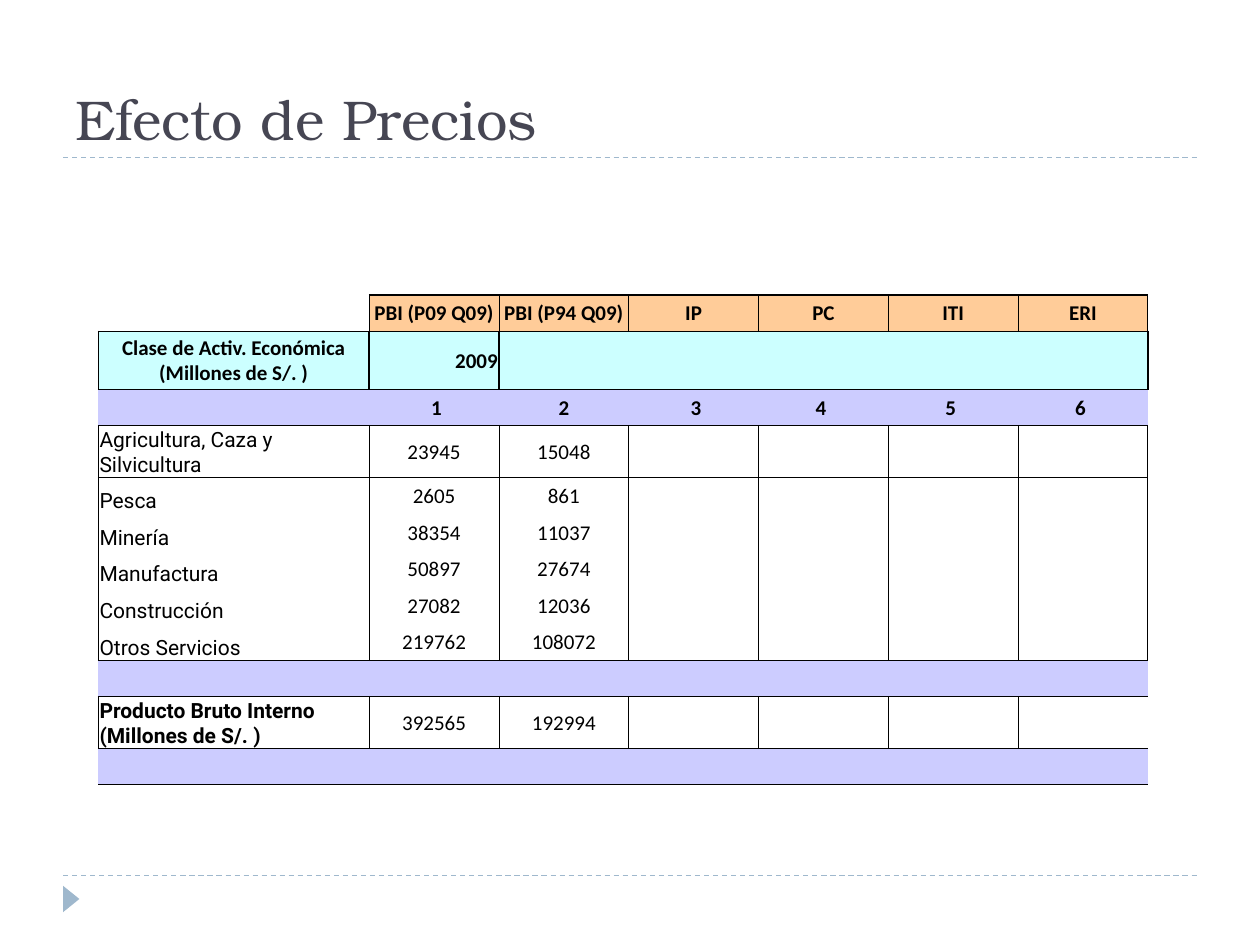
from lxml import etree
from pptx import Presentation
from pptx import util as u
from pptx.dml.color import RGBColor
from pptx.enum import dml, shapes, text
from pptx.oxml import ns

COLORS = {
    "title": "464653", "accent": "9FB8CD", "ink": "000000",
    "header": "FFCC99", "year": "CCFFFF", "band": "CCCCFF",
}
NO_STYLE = "{2D5ABB26-0587-4C30-8999-92F81FD0307C}"
COLUMN_WIDTHS = [2.15] + [1.03] * 6
ROW_HEIGHT = 0.29
TALL_ROWS = {"year": 0.46, "total": 0.41}

# Each row: kind, then the texts from the left
ROWS = [
    ("header", ["", "PBI (P09 Q09)", "PBI (P94 Q09)", "IP", "PC", "ITI", "ERI"]),
    ("year", ["Clase de Activ. Económica (Millones de S/. )", "2009"]),
    ("band", ["", " 1", "2", " 3", "4 ", "5 ", "6 "]),
    ("first", ["Agricultura, Caza y Silvicultura", "23945", "15048"]),
    ("body", ["Pesca", "2605", "861"]),
    ("body", ["Minería", "38354", "11037"]),
    ("body", ["Manufactura", "50897", "27674"]),
    ("body", ["Construcción", "27082", "12036"]),
    ("last", ["Otros Servicios", "219762", "108072"]),
    ("band", []),
    ("total", ["Producto Bruto Interno (Millones de S/. )", "392565", "192994"]),
    ("band", []),
]

# Border widths in points by side, for each kind of row
BORDERS = {
    "header": {"L": 0.5, "R": 0.5, "T": 1, "B": 1},
    "year": {"T": 1, "B": 0.5},
    "band": {"T": 0.5, "B": 0.5},
    "first": {"L": 0.5, "R": 0.5, "T": 0.5},
    "body": {"L": 0.5, "R": 0.5},
    "last": {"L": 0.5, "R": 0.5, "B": 0.5},
    "total": {"L": 0.5, "R": 0.5, "T": 0.5, "B": 0.5},
}
# Cells that differ from their row, by kind and column
BORDER_EXCEPTIONS = {
    ("header", 0): {"R": 0.5, "B": 1},
    ("year", 0): {"L": 0.5, "R": 1, "T": 1, "B": 0.5},
    ("year", 1): {"L": 1, "T": 1, "B": 0.5},
    ("year", 6): {"R": 1, "T": 1, "B": 0.5},
    ("total", 6): {"L": 0.5, "T": 0.5, "B": 0.5},
}


def rgb(name):
    return RGBColor.from_string(COLORS[name])


def set_attributes(target, values):
    for name, value in values.items():
        setattr(target, name, value)


def add_dashed_line(slide, top):
    line = slide.shapes.add_connector(
        shapes.MSO_CONNECTOR.STRAIGHT,
        u.Inches(0.5), u.Inches(top), u.Inches(9.5), u.Inches(top))
    set_attributes(line.line, {"width": u.Pt(0.75), "dash_style": dml.MSO_LINE.DASH})
    line.line.color.rgb = rgb("accent")
    etree.SubElement(line._element.spPr, ns.qn("a:effectLst"))


def add_marker(slide):
    marker = slide.shapes.add_shape(
        shapes.MSO_SHAPE.ISOSCELES_TRIANGLE,
        u.Inches(0.46), u.Inches(7.07), u.Inches(0.21), u.Inches(0.13))
    marker.rotation = 90
    marker.shadow.inherit = False
    marker.fill.solid()
    marker.fill.fore_color.rgb = rgb("accent")
    marker.line.fill.background()


def add_title(slide, wording):
    box = slide.shapes.add_textbox(
        u.Inches(0.5), u.Inches(0.17), u.Inches(9), u.Inches(1.08))
    set_attributes(box.text_frame, {
        "word_wrap": True, "vertical_anchor": text.MSO_ANCHOR.BOTTOM})
    run = box.text_frame.paragraphs[0].add_run()
    run.text = wording
    set_attributes(run.font, {"name": "TeX Gyre Bonum", "size": u.Pt(32)})
    run.font.color.rgb = rgb("title")


def set_borders(cell, widths):
    properties = cell._tc.get_or_add_tcPr()
    for side in "LRTB":
        if side in widths:
            line = etree.SubElement(properties, ns.qn(f"a:ln{side}"),
                                    w=str(u.Pt(widths[side])))
            fill = etree.SubElement(line, ns.qn("a:solidFill"))
            etree.SubElement(fill, ns.qn("a:srgbClr"), val=COLORS["ink"])


def write_cell(cell, wording, kind, column):
    is_label = column == 0 and kind in ("first", "body", "last", "total")
    set_attributes(cell, {
        "margin_left": u.Inches(0.01), "margin_right": u.Inches(0.01),
        "margin_top": u.Inches(0.01), "margin_bottom": 0,
        "vertical_anchor": text.MSO_ANCHOR.BOTTOM if is_label else text.MSO_ANCHOR.MIDDLE,
    })
    paragraph = cell.text_frame.paragraphs[0]
    if not wording:
        # Keeps the empty line from stretching the row
        etree.SubElement(paragraph._p, ns.qn("a:endParaRPr"), sz="1200")
        return
    if is_label:
        paragraph.alignment = text.PP_ALIGN.LEFT
    elif (kind, column) == ("year", 1):
        paragraph.alignment = text.PP_ALIGN.RIGHT
    else:
        paragraph.alignment = text.PP_ALIGN.CENTER
    run = paragraph.add_run()
    run.text = wording
    set_attributes(run.font, {
        "name": "Roboto" if is_label else "Calibri",
        "size": u.Pt(12),
        "bold": kind in ("header", "year", "band") or (is_label and kind == "total"),
    })
    run.font.color.rgb = rgb("ink")


def fill_cell(cell, kind, column):
    if kind in COLORS and (kind, column) != ("header", 0):
        cell.fill.solid()
        cell.fill.fore_color.rgb = rgb(kind)
    else:
        cell.fill.background()


def add_price_table(slide):
    heights = [TALL_ROWS.get(kind, ROW_HEIGHT) for kind, _ in ROWS]
    frame = slide.shapes.add_table(
        len(ROWS), len(COLUMN_WIDTHS), u.Inches(0.78), u.Inches(2.34),
        u.Inches(sum(COLUMN_WIDTHS)), u.Inches(sum(heights)))
    table = frame.table
    set_attributes(table, {"first_row": False, "horz_banding": False})
    table._tbl.tblPr.find(ns.qn("a:tableStyleId")).text = NO_STYLE
    for column, width in zip(table.columns, COLUMN_WIDTHS):
        column.width = u.Inches(width)
    for row, height, (kind, wordings) in zip(table.rows, heights, ROWS):
        row.height = u.Inches(height)
        for column, cell in enumerate(row.cells):
            wording = wordings[column] if column < len(wordings) else ""
            write_cell(cell, wording, kind, column)
            set_borders(cell, BORDER_EXCEPTIONS.get((kind, column), BORDERS[kind]))
            fill_cell(cell, kind, column)


def main():
    presentation = Presentation()
    set_attributes(presentation, {
        "slide_width": u.Inches(10), "slide_height": u.Inches(7.5)})
    slide = presentation.slides.add_slide(presentation.slide_layouts[6])

    # Frame of the page
    for top in (6.95, 1.25):
        add_dashed_line(slide, top)
    add_marker(slide)

    # Content
    add_title(slide, "Efecto de Precios")
    add_price_table(slide)

    presentation.save("out.pptx")


if __name__ == "__main__":
    main()
